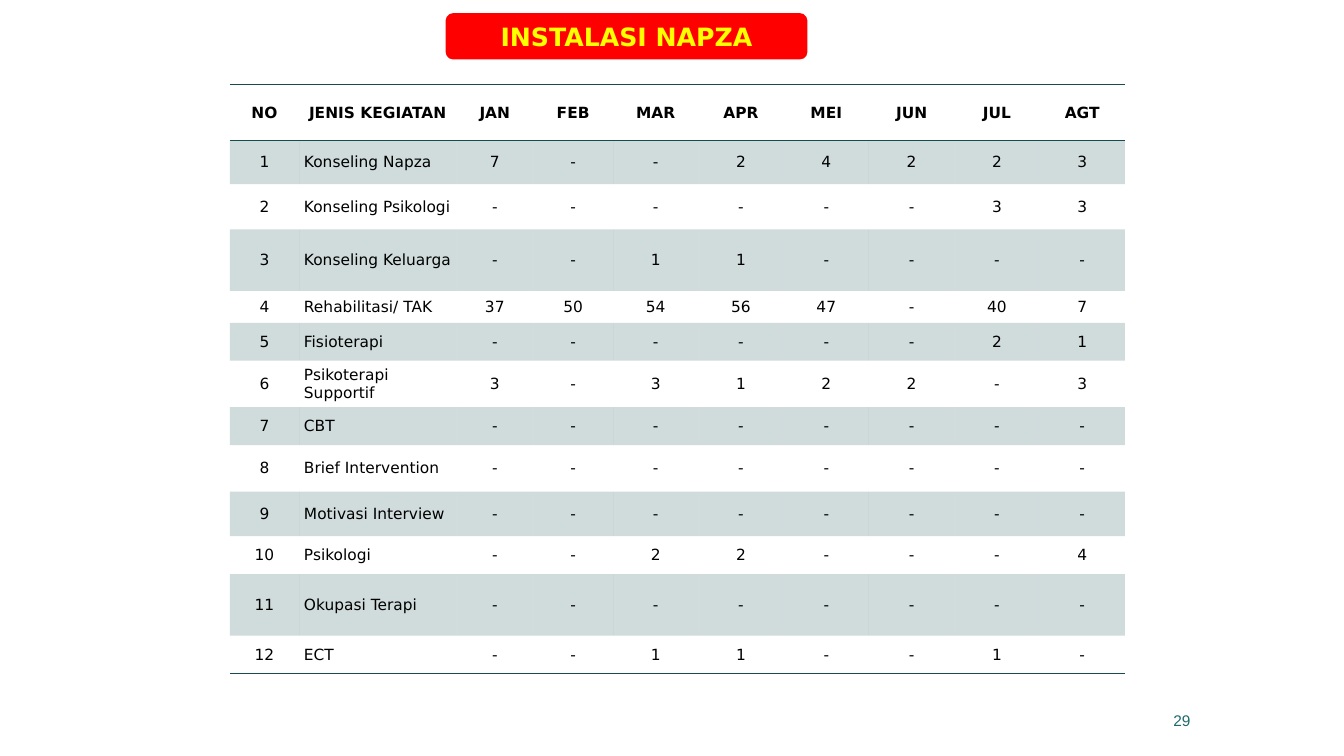
from lxml.etree import SubElement as Sub
from pptx import Presentation
from pptx.dml.color import RGBColor
from pptx.enum.shapes import MSO_SHAPE as Shape
from pptx.enum.text import MSO_ANCHOR as Anchor, MSO_AUTO_SIZE as Fit, PP_ALIGN as Align
from pptx.oxml.ns import qn
from pptx.util import Cm, Pt

FONT = "DejaVu Sans"
TEAL = "164B4F"
PLAIN = "{2D5ABB26-0587-4C30-8999-92F81FD0307C}"  # table style without grid

HEAD = ["NO", "JENIS KEGIATAN", "JAN", "FEB", "MAR", "APR", "MEI", "JUN", "JUL", "AGT"]
# activity, monthly counts, row height in cm
ACTS = [
    ("Konseling Napza", "7 - - 2 4 2 2 3", 1.09),
    ("Konseling Psikologi", "- - - - - - 3 3", 1.14),
    ("Konseling Keluarga", "- - 1 1 - - - -", 1.55),
    ("Rehabilitasi/ TAK", "37 50 54 56 47 - 40 7", 0.81),
    ("Fisioterapi", "- - - - - - 2 1", 0.95),
    ("Psikoterapi Supportif", "3 - 3 1 2 2 - 3", 1.17),
    ("CBT", "- - - - - - - -", 0.96),
    ("Brief Intervention", "- - - - - - - -", 1.17),
    ("Motivasi Interview", "- - - - - - - -", 1.12),
    ("Psikologi", "- - 2 2 - - - 4", 0.96),
    ("Okupasi Terapi", "- - - - - - - -", 1.55),
    ("ECT", "- - 1 1 - - 1 -", 0.96),
]
COLS = [1.75, 3.96, 1.94, 2.01] + [2.15] * 6


def color(code):
    return RGBColor.from_string(code)


def write(frame, text, size, code, align=Align.CENTER, bold=False, font=FONT):
    para = frame.paragraphs[0]
    para.alignment = align
    run = para.add_run()
    run.text = text
    run.font.name = font
    run.font.size = Pt(size)
    run.font.bold = bold
    run.font.color.rgb = color(code)


def add_title(slide, text, box):
    """Set the title on a red rounded plate."""
    plate = slide.shapes.add_shape(Shape.ROUNDED_RECTANGLE, *box)
    plate.shadow.inherit = False
    plate.fill.solid()
    plate.fill.fore_color.rgb = color("FF0000")
    plate.line.fill.background()
    title = slide.shapes.title
    title.left, title.top, title.width, title.height = box
    frame = title.text_frame
    frame.auto_size = Fit.NONE
    frame.vertical_anchor = Anchor.MIDDLE
    write(frame, text, 18, "FFFF00", bold=True)
    # the plate lies below the title text
    title.element.addprevious(plate.element)


def add_rule(cell, side):
    line = Sub(cell._tc.get_or_add_tcPr(), qn("a:" + side), w=str(Pt(1)))
    fill = Sub(line, qn("a:solidFill"))
    Sub(fill, qn("a:srgbClr"), val=TEAL)


def shade(cell):
    cell.fill.solid()
    cell.fill.fore_color.rgb = color(TEAL)
    tint = next(cell._tc.tcPr.iter(qn("a:srgbClr")))
    Sub(tint, qn("a:alpha"), val="20000")


def fill_cell(cell, text, row, col):
    pad = 0.03 if row and col > 7 else 0.12
    cell.margin_left = cell.margin_right = Cm(pad)
    cell.margin_top = cell.margin_bottom = Cm(pad)
    cell.vertical_anchor = Anchor.MIDDLE
    align = Align.LEFT if row and col == 1 else Align.CENTER
    write(cell.text_frame, text, 11, "000000", align, bold=row == 0)
    if row == 0:
        add_rule(cell, "lnT")
    if row in (0, len(ACTS)):
        add_rule(cell, "lnB")
    if row % 2:
        shade(cell)
    else:
        cell.fill.background()


def add_grid(slide):
    rows = [HEAD] + [[str(no), name, *nums.split()]
                     for no, (name, nums, _) in enumerate(ACTS, 1)]
    highs = [1.42] + [high for _, _, high in ACTS]
    shape = slide.shapes.add_table(len(rows), len(COLS), Cm(5.79), Cm(2.13),
                                   Cm(sum(COLS)), Cm(sum(highs)))
    next(shape.element.iter(qn("a:tableStyleId"))).text = PLAIN
    table = shape.table
    table.horz_banding = False
    for col, wide in zip(table.columns, COLS):
        col.width = Cm(wide)
    for r, (texts, high) in enumerate(zip(rows, highs)):
        table.rows[r].height = Cm(high)
        for c, text in enumerate(texts):
            fill_cell(table.cell(r, c), text, r, c)


def add_number(slide, text):
    box = slide.shapes.add_textbox(Cm(22.35), Cm(17.65), Cm(7.9), Cm(1.02))
    frame = box.text_frame
    frame.word_wrap = True
    frame.vertical_anchor = Anchor.MIDDLE
    write(frame, text, 11, "1F696F", Align.RIGHT, font="Arial")


def main():
    prs = Presentation()
    prs.slide_width, prs.slide_height = Cm(33.87), Cm(19.05)
    slide = prs.slides.add_slide(prs.slide_layouts[5])
    add_title(slide, "INSTALASI NAPZA", (Cm(11.23), Cm(0.33), Cm(9.12), Cm(1.17)))
    add_grid(slide)
    add_number(slide, "29")
    prs.save("out.pptx")


if __name__ == "__main__":
    main()
